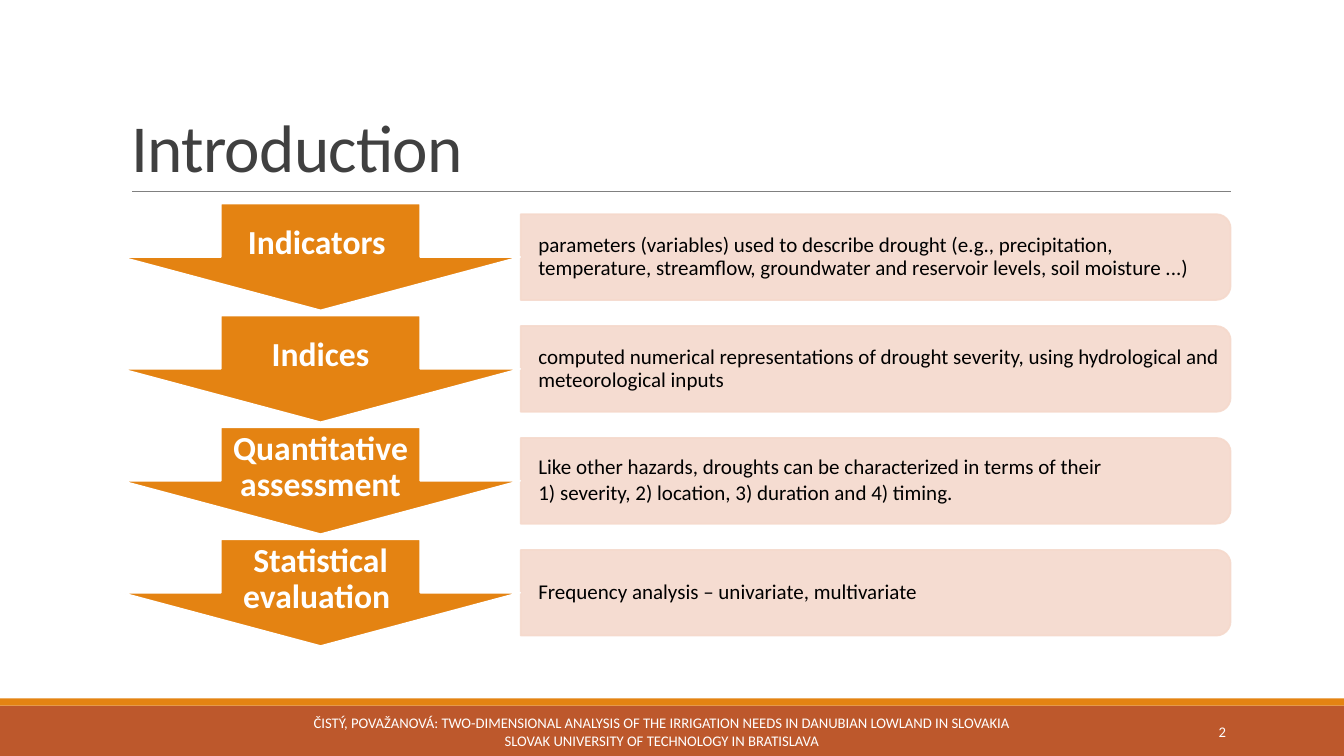
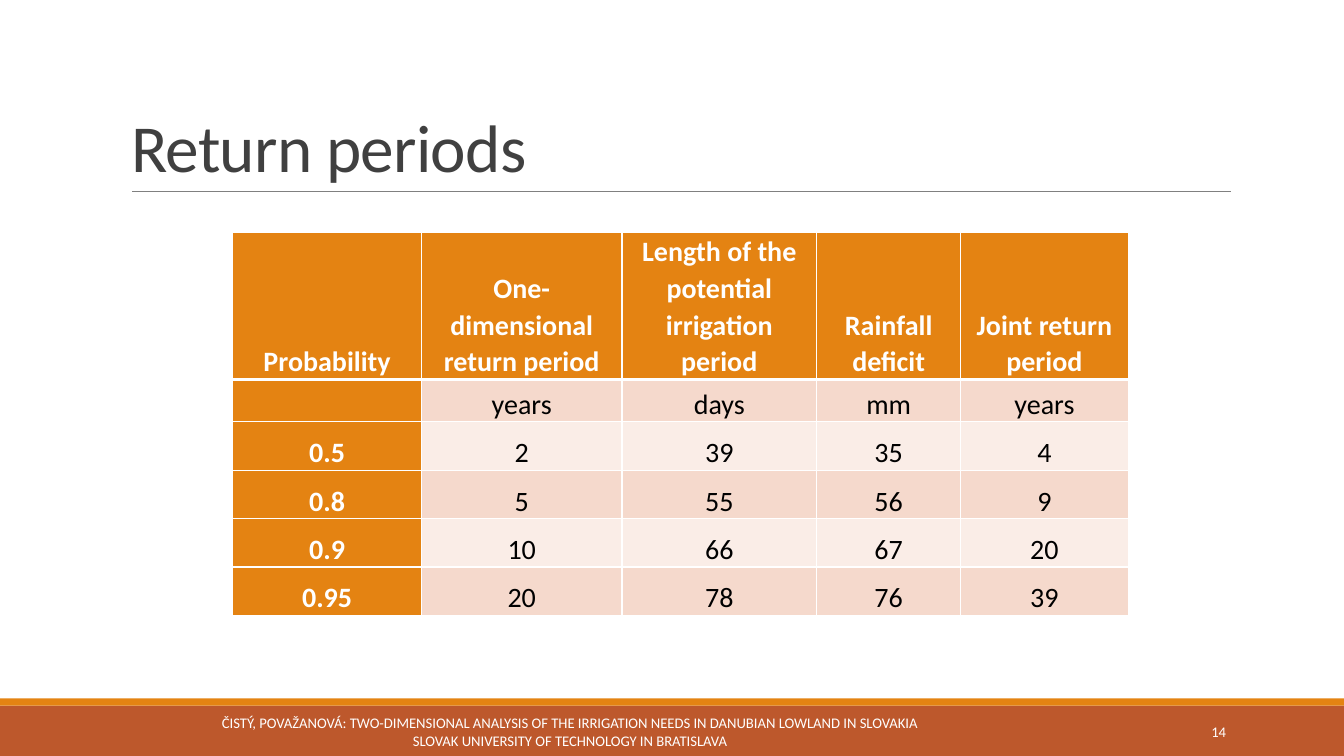
from lxml.etree import SubElement
from pptx import Presentation
from pptx.dml.color import RGBColor
from pptx.enum.shapes import MSO_CONNECTOR, MSO_SHAPE
from pptx.enum.text import MSO_ANCHOR, MSO_AUTO_SIZE, PP_ALIGN
from pptx.oxml.ns import qn
from pptx.util import Emu, Pt

FONT = "Calibri"
ORANGE, RUST = "E48312", "BD582C"
PEACH, PALE = "F5D9CC", "FAEDE7"
WHITE, BLACK, DARK, GRAY = "FFFFFF", "000000", "404040", "808080"

FOOTER = ("ČISTÝ, POVAŽANOVÁ: TWO-DIMENSIONAL ANALYSIS OF THE IRRIGATION NEEDS "
          "IN DANUBIAN LOWLAND IN SLOVAKIA SLOVAK UNIVERSITY OF TECHNOLOGY "
          "IN BRATISLAVA")

STEPS = [
    ("Indicators ", "parameters (variables) used to describe drought (e.g., "
     "precipitation, temperature, streamflow, groundwater and reservoir levels, "
     "soil moisture ...)"),
    ("Indices", "computed numerical representations of drought severity, using "
     "hydrological and meteorological inputs"),
    ("Quantitative assessment", "Like other hazards, droughts can be characterized "
     "in terms of their\n1) severity, 2) location, 3) duration and 4) timing."),
    ("Statistical evaluation ", "Frequency analysis – univariate, multivariate"),
]

RETURN_PERIODS = [
    ["Probability", "One-dimensional return period",
     "Length of the potential irrigation period", "Rainfall deficit",
     "Joint return period"],
    ["", "years", "days", "mm", "years"],
    ["0.5", "2", "39", "35", "4"],
    ["0.8", "5", "55", "56", "9"],
    ["0.9", "10", "66", "67", "20"],
    ["0.95", "20", "78", "76", "39"],
]
COL_WIDTHS = [187, 199, 193, 143, 166]
ROW_HEIGHTS = [129, 42, 48, 48, 48, 48]


def px(n):
    """Lengths are given at 100 px to the inch."""
    return Emu(n * 9144)


def box(*lengths):
    return [px(n) for n in lengths]


def rgb(color):
    return RGBColor.from_string(color)


def format_text(tf, size, color, bold=False, align=PP_ALIGN.LEFT, spacing=1.0,
                after=0):
    for p in tf.paragraphs:
        p.alignment = align
        p.line_spacing = spacing
        p.space_before, p.space_after = Pt(0), Pt(after)
        for r in p.runs:
            f = r.font
            f.name, f.size, f.bold = FONT, Pt(size), bold
            f.color.rgb = rgb(color)


def set_frame(tf, text, anchor=MSO_ANCHOR.MIDDLE, margins=(10, 5, 10, 5)):
    tf.text = text
    tf.word_wrap = True
    tf.auto_size = MSO_AUTO_SIZE.NONE
    tf.vertical_anchor = anchor
    (tf.margin_left, tf.margin_top,
     tf.margin_right, tf.margin_bottom) = box(*margins)


def add_text(s, at, text, size, color, margins=(10, 5, 10, 5), **style):
    tf = s.shapes.add_textbox(*box(*at)).text_frame
    set_frame(tf, text, margins=margins)
    format_text(tf, size, color, **style)


def add_shape(s, kind, at, fill, line=None):
    sp = s.shapes.add_shape(kind, *box(*at))
    sp.shadow.inherit = False
    sp.fill.solid()
    sp.fill.fore_color.rgb = rgb(fill)
    if line:
        sp.line.color.rgb = rgb(line)
        sp.line.width = Pt(1.25)
    else:
        sp.line.fill.background()
    return sp


def add_rule(s, x1, y1, x2, y2):
    line = s.shapes.add_connector(MSO_CONNECTOR.STRAIGHT, *box(x1, y1, x2, y2))
    line.line.color.rgb = rgb(GRAY)
    line.line.width = Pt(0.5)
    SubElement(line.element.spPr, qn("a:effectLst"))


def add_slide(prs, title, number, footer_at):
    """Slide with the shared bands, title, rule, footer and number."""
    s = prs.slides.add_slide(prs.slide_layouts[5])
    add_shape(s, MSO_SHAPE.RECTANGLE, (0, 700, 1333, 50), RUST)
    add_shape(s, MSO_SHAPE.RECTANGLE, (0, 693, 1333, 7), ORANGE)
    add_rule(s, 131, 190, 1221, 190)

    sp = s.shapes.title
    sp.left, sp.top, sp.width, sp.height = box(120, 31, 1100, 159)
    set_frame(sp.text_frame, title, MSO_ANCHOR.BOTTOM)
    format_text(sp.text_frame, 48, DARK, spacing=0.85)
    for r_pr in sp.element.iter(qn("a:rPr")):
        r_pr.set("spc", "-50")

    add_text(s, footer_at, FOOTER, 10.5, WHITE, align=PP_ALIGN.CENTER)
    add_text(s, (1083, 706, 143, 40), number, 10.5, WHITE, align=PP_ALIGN.RIGHT)
    return s


def add_step(s, top, label, description):
    """Down arrow with its label, and a description panel to the right."""
    left, width, height = 516, 704, 85
    mid_x, mid_y = left + width // 2, top + 53

    # The panel is an upright shape turned so its round corners face right
    panel = add_shape(s, MSO_SHAPE.ROUND_2_SAME_RECTANGLE,
                      (mid_x - height // 2, mid_y - width // 2, height, width),
                      PEACH, PEACH)
    panel.rotation = 90
    for clr in panel.element.spPr.iter(qn("a:srgbClr")):
        SubElement(clr, qn("a:alpha"), val="90000")
    add_text(s, (left, mid_y - 38, 700, 76), description, 15, BLACK,
             margins=(18, 3, 6, 3), spacing=0.9, after=2.25)

    arrow = add_shape(s, MSO_SHAPE.DOWN_ARROW, (120, top, 396, 106), ORANGE, WHITE)
    set_frame(arrow.text_frame, label)
    format_text(arrow.text_frame, 24, WHITE, bold=True, align=PP_ALIGN.CENTER,
                spacing=0.9)


def set_borders(cell, top=1, bottom=1):
    tc_pr = cell._tc.get_or_add_tcPr()
    for side, width in (("L", 1), ("R", 1), ("T", top), ("B", bottom)):
        ln = SubElement(tc_pr, qn(f"a:ln{side}"), w=str(Pt(width)))
        SubElement(SubElement(ln, qn("a:solidFill")), qn("a:srgbClr"), val=WHITE)


def add_table(s, left, top, rows):
    table = s.shapes.add_table(
        len(rows), len(rows[0]),
        *box(left, top, sum(COL_WIDTHS), sum(ROW_HEIGHTS))).table
    table.first_col, table.horz_banding = True, False
    for col, width in zip(table.columns, COL_WIDTHS):
        col.width = px(width)
    for row, height in zip(table.rows, ROW_HEIGHTS):
        row.height = px(height)

    for i, values in enumerate(rows):
        for j, value in enumerate(values):
            cell = table.cell(i, j)
            heading = i == 0 or j == 0
            # A thick line parts the header row from the rest
            set_borders(cell, top=3 if i == 1 else 1, bottom=3 if i == 0 else 1)
            cell.fill.solid()
            band = PEACH if i % 2 else PALE
            cell.fill.fore_color.rgb = rgb(ORANGE if heading else band)
            cell.vertical_anchor = MSO_ANCHOR.BOTTOM
            cell.margin_left = cell.margin_right = px(5)
            cell.margin_top = cell.margin_bottom = 0
            cell.text_frame.text = value
            format_text(cell.text_frame, 20, WHITE if heading else BLACK,
                        bold=heading, align=PP_ALIGN.CENTER, spacing=1.07)


def main():
    prs = Presentation()
    prs.slide_width, prs.slide_height = box(1333, 750)

    # Introduction
    s = add_slide(prs, "Introduction", "2", (290, 706, 733, 40))
    for i, (label, description) in enumerate(STEPS):
        add_step(s, 202 + 111 * i, label, description)

    # Return periods
    s = add_slide(prs, "Return periods", "14", (200, 706, 731, 40))
    add_table(s, 231, 231, RETURN_PERIODS)

    prs.save("out.pptx")


if __name__ == "__main__":
    main()
